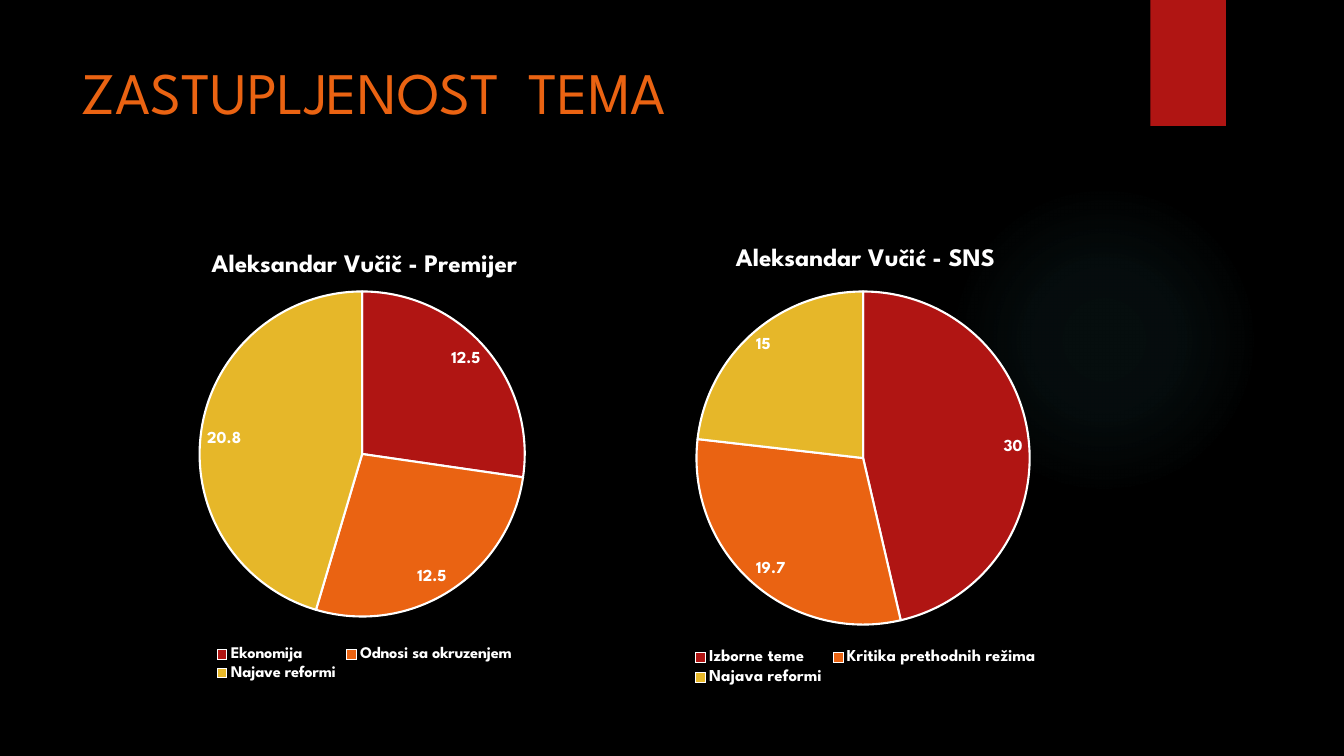
from lxml.etree import SubElement
from pptx import Presentation
from pptx.chart.data import CategoryChartData
from pptx.dml.color import RGBColor
from pptx.enum.chart import XL_CHART_TYPE, XL_LABEL_POSITION, XL_LEGEND_POSITION
from pptx.enum.shapes import MSO_SHAPE
from pptx.enum.text import MSO_ANCHOR
from pptx.oxml import parse_xml
from pptx.oxml.ns import nsdecls, qn
from pptx.util import Inches, Pt

WIDTH, HEIGHT = 13.33, 7.5
RED, ORANGE, YELLOW, WHITE = "B01513", "EA6312", "E6B729", "FFFFFF"


def color(value):
    return RGBColor.from_string(value)


def style_font(font, size, fill=WHITE, bold=False):
    font.name = "League Spartan"
    font.size = Pt(size)
    font.bold = bold
    font.color.rgb = color(fill)


def write(frame, text, size, fill=WHITE, bold=False):
    frame.text = text
    style_font(frame.paragraphs[0].runs[0].font, size, fill, bold)


class TopicSlide:
    """Dark slide whose elements are placed by shares of its size."""

    def __init__(self, deck):
        self.slide = deck.slides.add_slide(deck.slide_layouts[6])
        background = self.slide.background.fill
        background.solid()
        background.fore_color.rgb = color("000000")

    def place(self, left, top, width, height):
        return [Inches(WIDTH * left), Inches(HEIGHT * top),
                Inches(WIDTH * width), Inches(HEIGHT * height)]

    def block(self, preset, area, fill):
        block = self.slide.shapes.add_shape(preset, *self.place(*area))
        block.shadow.inherit = False
        block.fill.solid()
        block.fill.fore_color.rgb = color(fill)
        block.line.fill.background()
        return block

    def glow(self, area, fill, stops):
        glow = self.block(MSO_SHAPE.OVAL, area, fill)
        marks = "".join(
            f'<a:gs pos="{position * 1000}"><a:srgbClr val="{fill}">'
            f'<a:alpha val="{opacity * 1000}"/></a:srgbClr></a:gs>'
            for position, opacity in stops)
        gradient = parse_xml(
            f'<a:gradFill {nsdecls("a")}><a:gsLst>{marks}</a:gsLst>'
            '<a:path path="circle"><a:fillToRect l="50000" t="50000" r="50000" b="50000"/>'
            '</a:path></a:gradFill>')
        properties = glow.fill._xPr
        properties.replace(properties.find(qn("a:solidFill")), gradient)

    def heading(self, area, text):
        frame = self.slide.shapes.add_textbox(*self.place(*area)).text_frame
        frame.word_wrap = True
        frame.vertical_anchor = MSO_ANCHOR.TOP
        write(frame, text, 42, ORANGE)

    def pie(self, area, title, topics, legend_size, plot_area):
        data = CategoryChartData()
        data.categories = list(topics)
        data.add_series("Series 1", list(topics.values()))
        chart = self.slide.shapes.add_chart(
            XL_CHART_TYPE.PIE, *self.place(*area), data).chart
        style_font(chart.font, 10)
        chart.has_title = True
        write(chart.chart_title.text_frame, title, 18, bold=True)
        chart.chart_title.include_in_layout = False
        chart.has_legend = True
        chart.legend.position = XL_LEGEND_POSITION.BOTTOM
        chart.legend.include_in_layout = False
        style_font(chart.legend.font, legend_size, bold=True)

        plot = chart.plots[0]
        plot.vary_by_categories = True
        plot.has_data_labels = True
        labels = plot.data_labels
        labels.show_value = True
        labels.show_percentage = False
        labels.position = XL_LABEL_POSITION.INSIDE_END
        style_font(labels.font, 12, bold=True)
        for index, fill in enumerate([RED, ORANGE, YELLOW]):
            wedge = plot.series[0].points[index].format
            wedge.fill.solid()
            wedge.fill.fore_color.rgb = color(fill)
            wedge.line.color.rgb = color(WHITE)
            wedge.line.width = Pt(1.5)
        self.fix_plot(chart, plot_area)

    def fix_plot(self, chart, shares):
        plot_area = chart._chartSpace.chart.plotArea
        layout = plot_area.find(qn("c:layout"))
        if layout is None:
            layout = SubElement(plot_area, qn("c:layout"))
            plot_area.insert(0, layout)
        manual = SubElement(layout, qn("c:manualLayout"))
        settings = [("layoutTarget", "inner"), ("xMode", "edge"), ("yMode", "edge")]
        for tag, value in settings + list(zip("xywh", shares)):
            SubElement(manual, qn(f"c:{tag}")).set("val", str(value))


def main():
    deck = Presentation()
    deck.slide_width, deck.slide_height = Inches(WIDTH), Inches(HEIGHT)
    slide = TopicSlide(deck)
    slide.glow((9.41 / WIDTH, 1.83 / HEIGHT, 3.08 / WIDTH, 3.08 / HEIGHT),
               "50B9C1", [(0, 7), (36, 6), (69, 0)])
    slide.block(MSO_SHAPE.RECTANGLE,
                (11.41 / WIDTH, 0, 0.75 / WIDTH, 1.25 / HEIGHT), RED)
    slide.heading((0.71 / WIDTH, 0.5 / HEIGHT, 10.29 / WIDTH, 1.53 / HEIGHT),
                  "ZASTUPLJENOST  TEMA")
    slide.pie((1.34 / WIDTH, 2.31 / HEIGHT, 4.55 / WIDTH, 4.48 / HEIGHT),
              "Aleksandar Vučič - Premijer",
              {"Ekonomija": 12.5, "Odnosi sa okruzenjem": 12.5, "Najave reformi": 20.8},
              11.6, (0.14, 0.13, 0.71, 0.72))
    slide.pie((6.18 / WIDTH, 2.25 / HEIGHT, 4.81 / WIDTH, 4.59 / HEIGHT),
              "Aleksandar Vučić - SNS",
              {"Izborne teme": 30, "Kritika prethodnih režima": 19.7, "Najava reformi": 15},
              11.9, (0.15, 0.14, 0.69, 0.72))
    deck.save("out.pptx")


if __name__ == "__main__":
    main()
